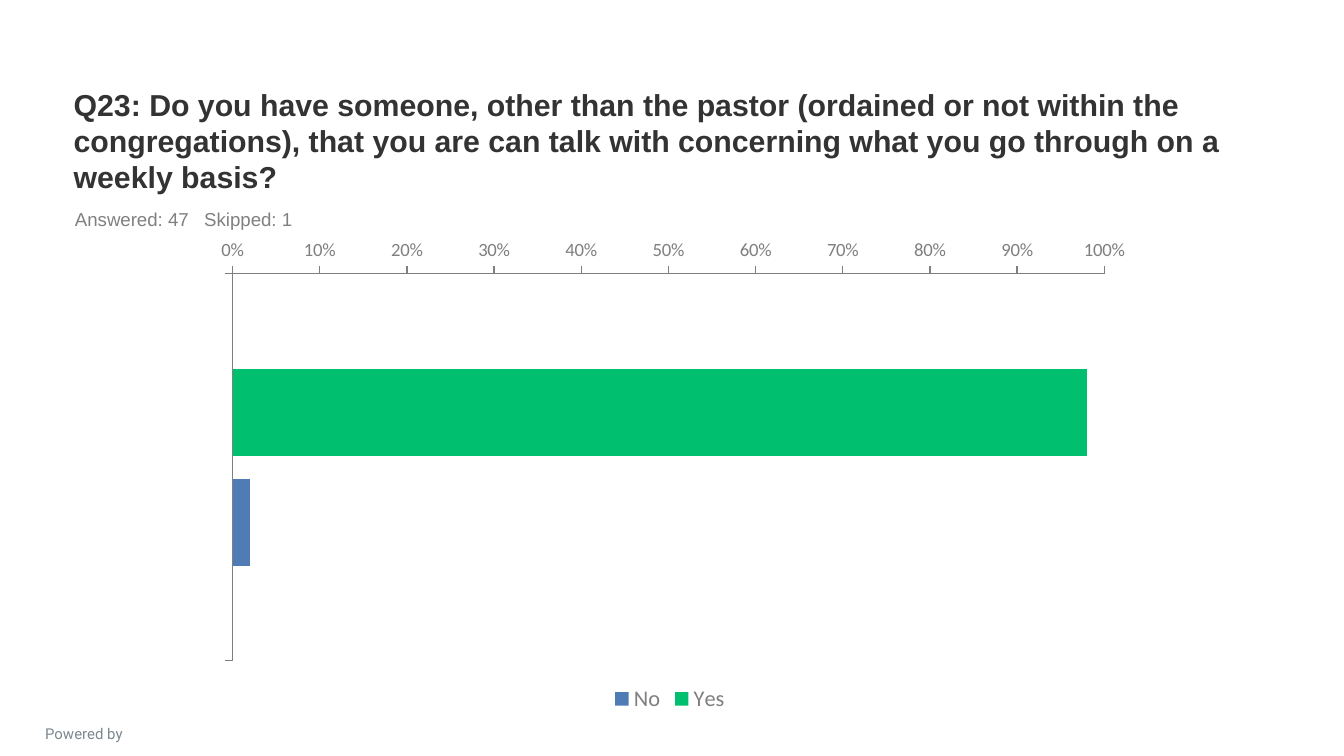
from pptx import Presentation
from pptx.chart.data import CategoryChartData as ChartData
from pptx.dml.color import RGBColor
from pptx.enum.chart import XL_CHART_TYPE as Kind
from pptx.enum.chart import XL_LEGEND_POSITION as Spot
from pptx.enum.chart import XL_TICK_LABEL_POSITION as Label
from pptx.enum.chart import XL_TICK_MARK as Tick
from pptx.enum.text import MSO_ANCHOR as Anchor
from pptx.enum.text import PP_ALIGN as Align
from pptx.util import Pt

DARK = RGBColor(0x33, 0x33, 0x33)
GRAY = RGBColor(0x80, 0x80, 0x80)
AXIS = RGBColor(0x7F, 0x7F, 0x7F)
SLATE = RGBColor(0x7C, 0x87, 0x8E)
GREEN = RGBColor(0x00, 0xBF, 0x6F)
BLUE = RGBColor(0x50, 0x7C, 0xB6)

PX = 4572
SIZE = (2000, 1125)
TEXTS = [
    ("Powered by", (10, 1068, 230, 36), "Roboto", 8, SLATE, False, Align.CENTER, Anchor.TOP),
    ("Q23: Do you have someone, other than the pastor (ordained or not within the "
     "congregations), that you are can talk with concerning what you go through on a "
     "weekly basis?",
     (90, 180, 1800, 120), "Arial", 16.2, DARK, True, Align.LEFT, Anchor.BOTTOM),
    ("Answered: 47   Skipped: 1", (92, 300, 1800, 52), "Arial", 10, GRAY, False,
     Align.LEFT, Anchor.TOP),
]
PLOT = (292, 342, 1410, 726)
BARS = [("Yes", 0.98, GREEN), ("No", 0.02, BLUE)]


def scale(box):
    return [n * PX for n in box]


def style(font, size, color, name="Calibri", bold=False):
    font.name = name
    font.size = Pt(size)
    font.bold = bold
    font.color.rgb = color


def add_text(slide, text, box, name, size, color, bold, align, anchor):
    frame = slide.shapes.add_textbox(*scale(box)).text_frame
    frame.word_wrap = True
    frame.vertical_anchor = anchor
    frame.text = text
    para = frame.paragraphs[0]
    para.alignment = align
    style(para.runs[0].font, size, color, name, bold)


def add_bars(slide):
    data = ChartData(number_format="0%")
    data.categories = [" "]
    for name, value, _ in BARS:
        data.add_series(name, [value])
    chart = slide.shapes.add_chart(Kind.BAR_CLUSTERED, *scale(PLOT), data).chart
    style(chart.font, 18, DARK)
    chart.has_title = False
    chart.has_legend = True
    chart.legend.position = Spot.BOTTOM
    chart.legend.include_in_layout = False
    style(chart.legend.font, 12, AXIS)

    plot = chart.plots[0]
    plot.gap_width = 219
    plot.overlap = -27
    plot.vary_by_categories = False
    for series, (_, _, color) in zip(plot.series, BARS):
        series.format.fill.solid()
        series.format.fill.fore_color.rgb = color

    cats, vals = chart.category_axis, chart.value_axis
    for axis in (cats, vals):
        axis.has_major_gridlines = False
        axis.major_tick_mark = Tick.OUTSIDE
        axis.minor_tick_mark = Tick.NONE
        axis.format.line.color.rgb = AXIS
        axis.format.line.width = Pt(0.75)
        style(axis.tick_labels.font, 10, AXIS)
    cats.tick_label_position = Label.LOW
    cats.reverse_order = True
    cats.crosses_at = 2
    vals.minimum_scale = 0
    vals.maximum_scale = 1
    vals.major_unit = 0.1
    vals.tick_labels.number_format = "0%"
    vals.tick_labels.number_format_is_linked = False


def main():
    deck = Presentation()
    deck.slide_width, deck.slide_height = scale(SIZE)
    slide = deck.slides.add_slide(deck.slide_layouts[6])
    for item in TEXTS:
        add_text(slide, *item)
    add_bars(slide)
    deck.save("out.pptx")


if __name__ == "__main__":
    main()
